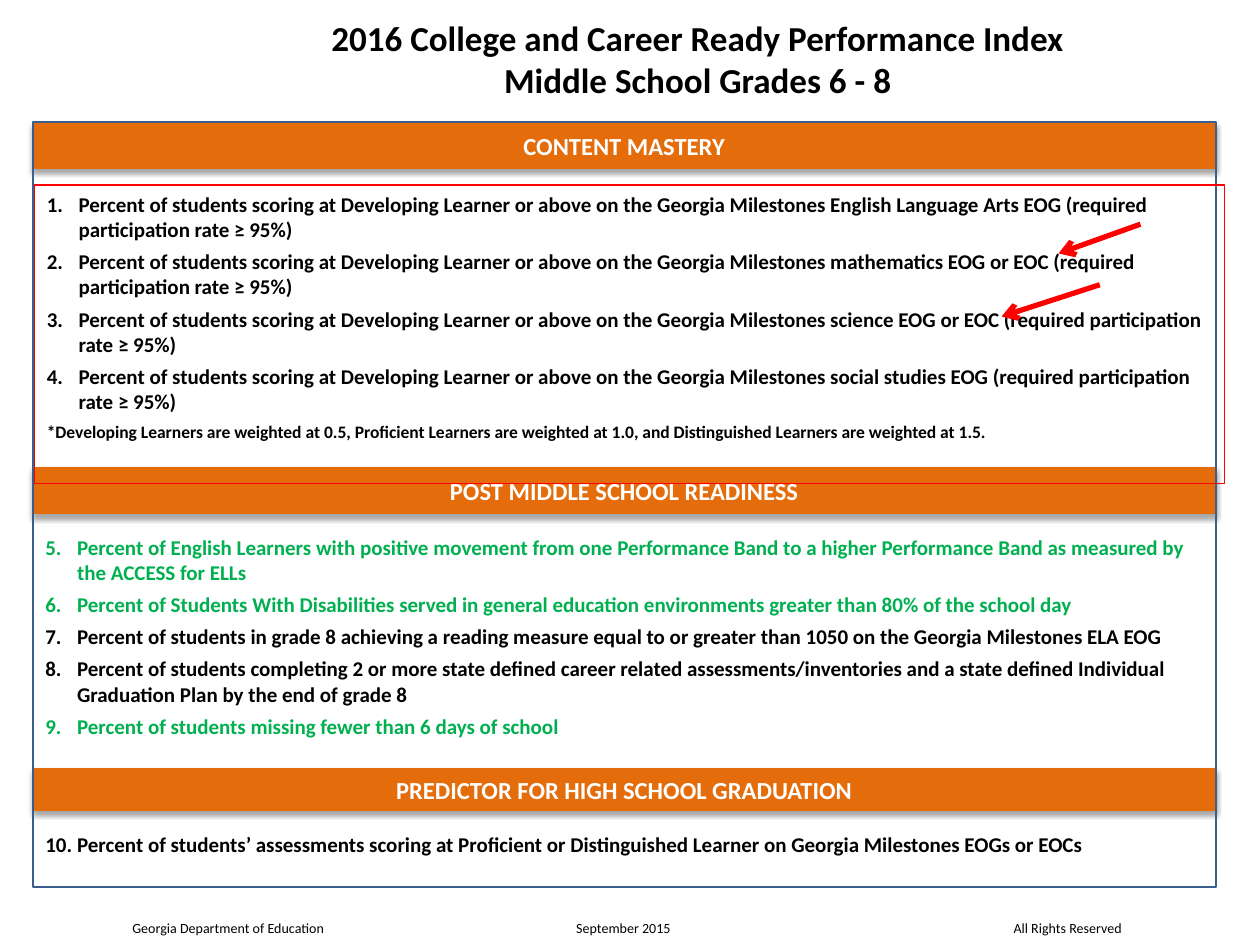
from dataclasses import dataclass

from lxml import etree
from pptx import Presentation
from pptx import util as u
from pptx.dml.color import RGBColor as Rgb
from pptx.enum import shapes, text
from pptx.oxml import ns


@dataclass(frozen=True)
class Theme:
    face: str = "Calibri"
    ink: Rgb = Rgb(0, 0, 0)
    white: Rgb = Rgb(255, 255, 255)
    orange: Rgb = Rgb(0xE4, 0x6C, 0x0A)
    green: Rgb = Rgb(0, 0xB0, 0x50)
    red: Rgb = Rgb(255, 0, 0)
    blue: Rgb = Rgb(0x3A, 0x5F, 0x8C)
    title: int = 20
    head: int = 14
    body: int = 12
    note: int = 10
    foot: int = 8


T = Theme()
RATE = "(required participation rate ≥ 95%)"
SCORE = "Percent of students scoring at Developing Learner or above on the Georgia Milestones"
MASTERY = [(f"{SCORE} {exam} {RATE}", T.ink) for exam in (
    "English Language Arts EOG", "mathematics EOG or EOC",
    "science EOG or EOC", "social studies EOG")]
NOTE = ("*Developing Learners are weighted at 0.5, Proficient Learners are weighted "
        "at 1.0, and Distinguished Learners are weighted at 1.5.")
READY = [
    ("Percent of English Learners with positive movement from one Performance Band to "
     "a higher Performance Band as measured by the ACCESS for ELLs", T.green),
    ("Percent of Students With Disabilities served in general education environments "
     "greater than 80% of the school day", T.green),
    ("Percent of students in grade 8 achieving a reading measure equal to or greater "
     "than 1050 on the Georgia Milestones ELA EOG", T.ink),
    ("Percent of students completing 2 or more state defined career related "
     "assessments/inventories and a state defined Individual Graduation Plan by the "
     "end of grade 8", T.ink),
    ("Percent of students missing fewer than 6 days of school", T.green),
]
GRAD = [("Percent of students’ assessments scoring at Proficient or Distinguished "
         "Learner on Georgia Milestones EOGs or EOCs", T.ink)]


def cm(*nums):
    return [u.Cm(n) for n in nums]


def put(shape, box):
    shape.left, shape.top, shape.width, shape.height = cm(*box)


def style(para, size, color, bold=True):
    font = para.font
    font.name, font.size, font.bold = T.face, u.Pt(size), bold
    font.color.rgb = color


def add(parent, tag, **attrs):
    return etree.SubElement(parent, ns.qn(tag), attrs)


def title(slide, box):
    shape = slide.shapes.title
    put(shape, box)
    frame = shape.text_frame
    frame.text = "2016 College and Career Ready Performance Index\vMiddle School Grades 6 - 8"
    frame.vertical_anchor = text.MSO_ANCHOR.MIDDLE
    frame.auto_size = text.MSO_AUTO_SIZE.NONE
    para = frame.paragraphs[0]
    para.alignment = text.PP_ALIGN.CENTER
    style(para, T.title, T.ink)


def shade(shape):
    """Cast a soft shadow straight down."""
    effects = add(shape.element.spPr, "a:effectLst")
    cast = add(effects, "a:outerShdw", blurRad="40000", dist="23000",
               dir="5400000", rotWithShape="0")
    tint = add(cast, "a:srgbClr", val=str(T.ink))
    add(tint, "a:alpha", val="35000")


def banner(slide, box, label):
    bar = slide.shapes.add_shape(shapes.MSO_SHAPE.RECTANGLE, *cm(*box))
    bar.fill.solid()
    bar.fill.fore_color.rgb = bar.line.color.rgb = T.orange
    bar.line.width = u.Pt(0.75)
    shade(bar)
    frame = bar.text_frame
    frame.text = label
    frame.vertical_anchor = text.MSO_ANCHOR.MIDDLE
    para = frame.paragraphs[0]
    para.alignment = text.PP_ALIGN.CENTER
    style(para, T.head, T.white)


def border(slide, box):
    edge = slide.shapes.add_shape(shapes.MSO_SHAPE.RECTANGLE, *cm(*box))
    edge.shadow.inherit = False
    edge.fill.background()
    edge.line.color.rgb = T.blue
    edge.line.width = u.Pt(1)


def items(slide, slot, box, rows, start, note=None):
    """Fill a body placeholder with numbered rows and an optional closing note."""
    shape = slide.placeholders[slot]
    slide.shapes.element.append(shape.element)  # in front of the banners
    put(shape, box)
    frame = shape.text_frame
    frame.vertical_anchor = text.MSO_ANCHOR.TOP
    frame.auto_size = text.MSO_AUTO_SIZE.NONE
    lines = [row[0] for row in rows] + ([note] if note else [])
    frame.text = "\n".join(lines)
    hang = u.Cm(0.64)
    for i, para in enumerate(frame.paragraphs):
        para.space_before, para.space_after = u.Pt(0), u.Pt(4)
        props = para._p.get_or_add_pPr()
        if i < len(rows):
            props.set("marL", str(hang))
            props.set("indent", str(-hang))
            add(props, "a:buAutoNum", type="arabicPeriod", startAt=str(start))
            style(para, T.body, rows[i][1])
        else:
            props.set("marL", "0")
            props.set("indent", "0")
            add(props, "a:buNone")
            style(para, T.note, T.ink)
    return shape


def arrows(slide, box):
    for x, y, dx, dy in ((22.3, 0.79, -1.65, 0.59), (21.48, 2.01, -1.98, 0.64)):
        left, top = box[0] + x, box[1] + y
        line = slide.shapes.add_connector(
            shapes.MSO_CONNECTOR.STRAIGHT, *cm(left, top, left + dx, top + dy))
        line.line.color.rgb = T.red
        line.line.width = u.Pt(3)
        props = line.element.spPr
        add(props.find(ns.qn("a:ln")), "a:tailEnd", type="arrow")
        add(props, "a:effectLst")


def footer(slide, box):
    frame = slide.shapes.add_textbox(*cm(*box)).text_frame
    frame.word_wrap = True
    frame.vertical_anchor = text.MSO_ANCHOR.MIDDLE
    frame.margin_left = 0
    frame.text = "Georgia Department of Education\tSeptember 2015\tAll Rights Reserved"
    para = frame.paragraphs[0]
    tabs = add(para._p.get_or_add_pPr(), "a:tabLst")
    for pos, side in ((9.9, "ctr"), (19.95, "r")):
        add(tabs, "a:tab", pos=str(u.Cm(pos)), algn=side)
    style(para, T.foot, T.ink, False)


def panel(slide, box):
    """Three banners, the border round them, and a list under each banner."""
    x, y, w, h = box
    for top, tall, label in ((0.03, 0.91, "CONTENT MASTERY"),
                             (6.96, 0.94, "POST MIDDLE SCHOOL READINESS"),
                             (13.03, 0.84, "PREDICTOR FOR HIGH SCHOOL GRADUATION")):
        banner(slide, (x, y + top, w, tall), label)
    border(slide, box)
    wide = w + 0.15
    first = (x + 0.03, y + 1.27, wide, 6.02)
    scores = items(slide, 2, first, MASTERY, 1, NOTE)
    scores.line.color.rgb = T.red
    scores.line.width = u.Pt(0.75)
    items(slide, 3, (x, y + 8.18, wide, 4.42), READY, 5)
    items(slide, 4, (x, y + 14.18, wide, 0.76), GRAD, 10)
    arrows(slide, first)


def main():
    deck = Presentation()
    deck.slide_width, deck.slide_height = cm(25.4, 19.05)
    slide = deck.slides.add_slide(deck.slide_layouts[4])
    spare = slide.placeholders[1].element
    spare.getparent().remove(spare)
    title(slide, (5.49, 0.03, 17.15, 2.29))
    panel(slide, (0.66, 2.46, 23.85, 15.42))
    footer(slide, (2.67, 18.42, 22.17, 0.58))
    deck.save("out.pptx")


if __name__ == "__main__":
    main()
